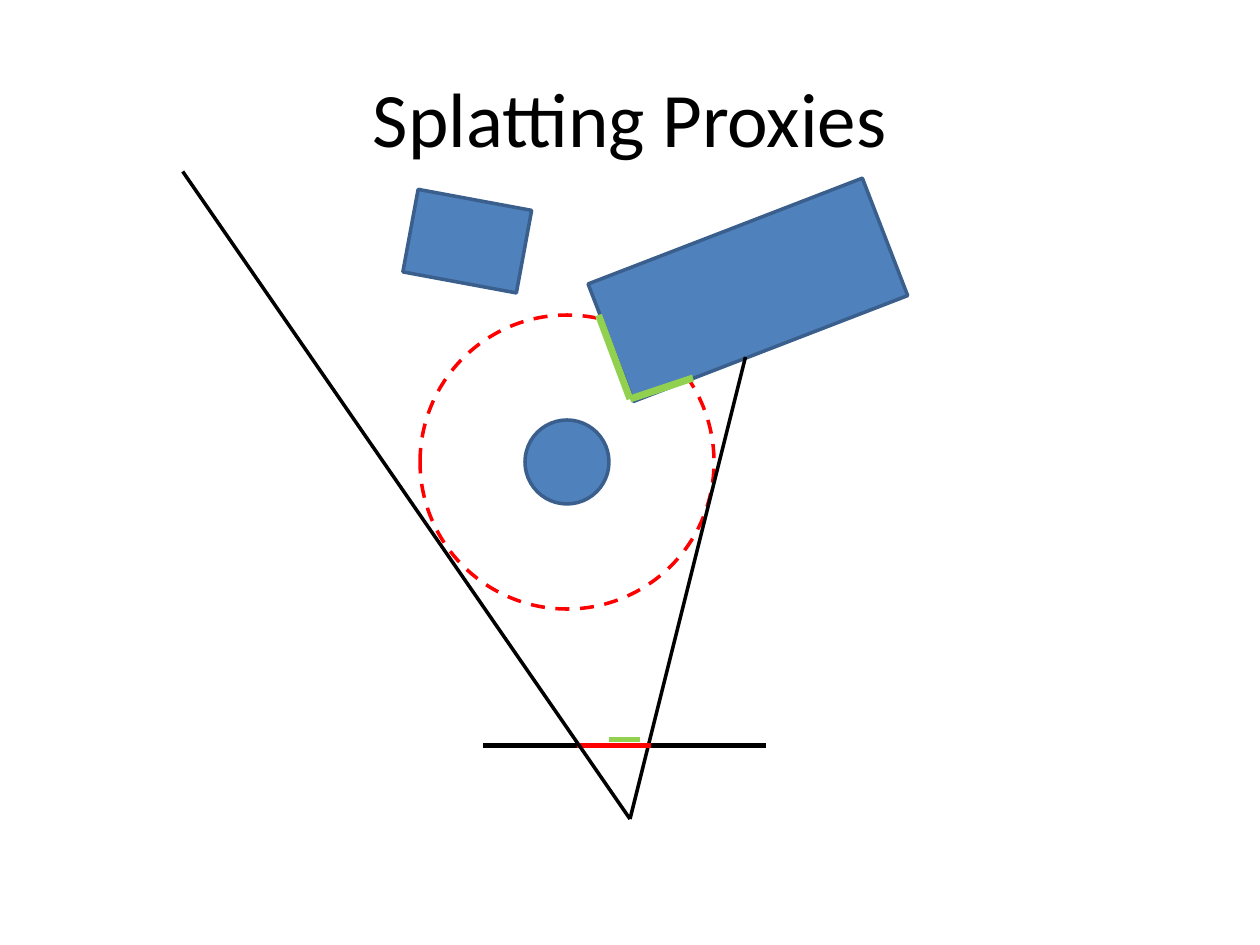
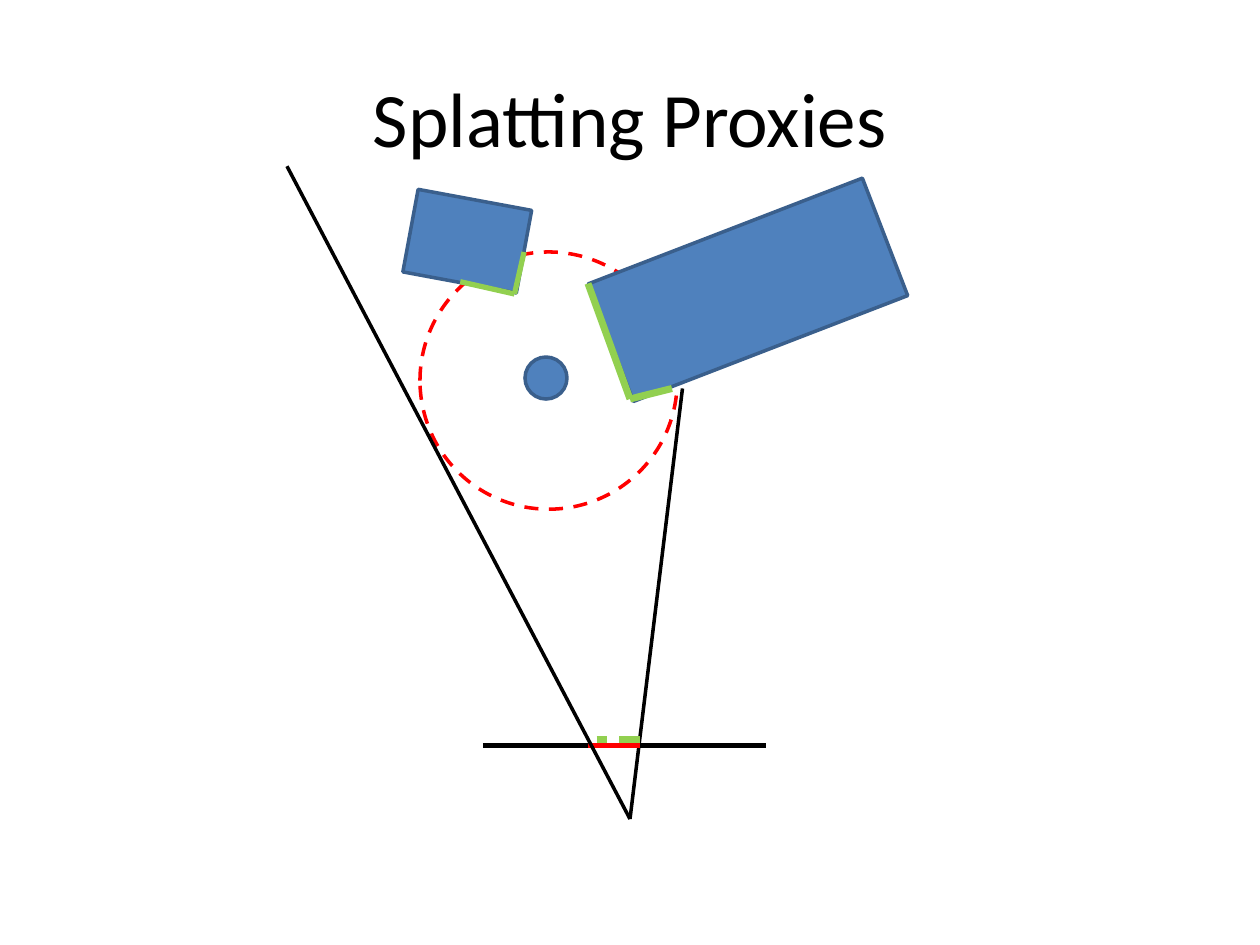
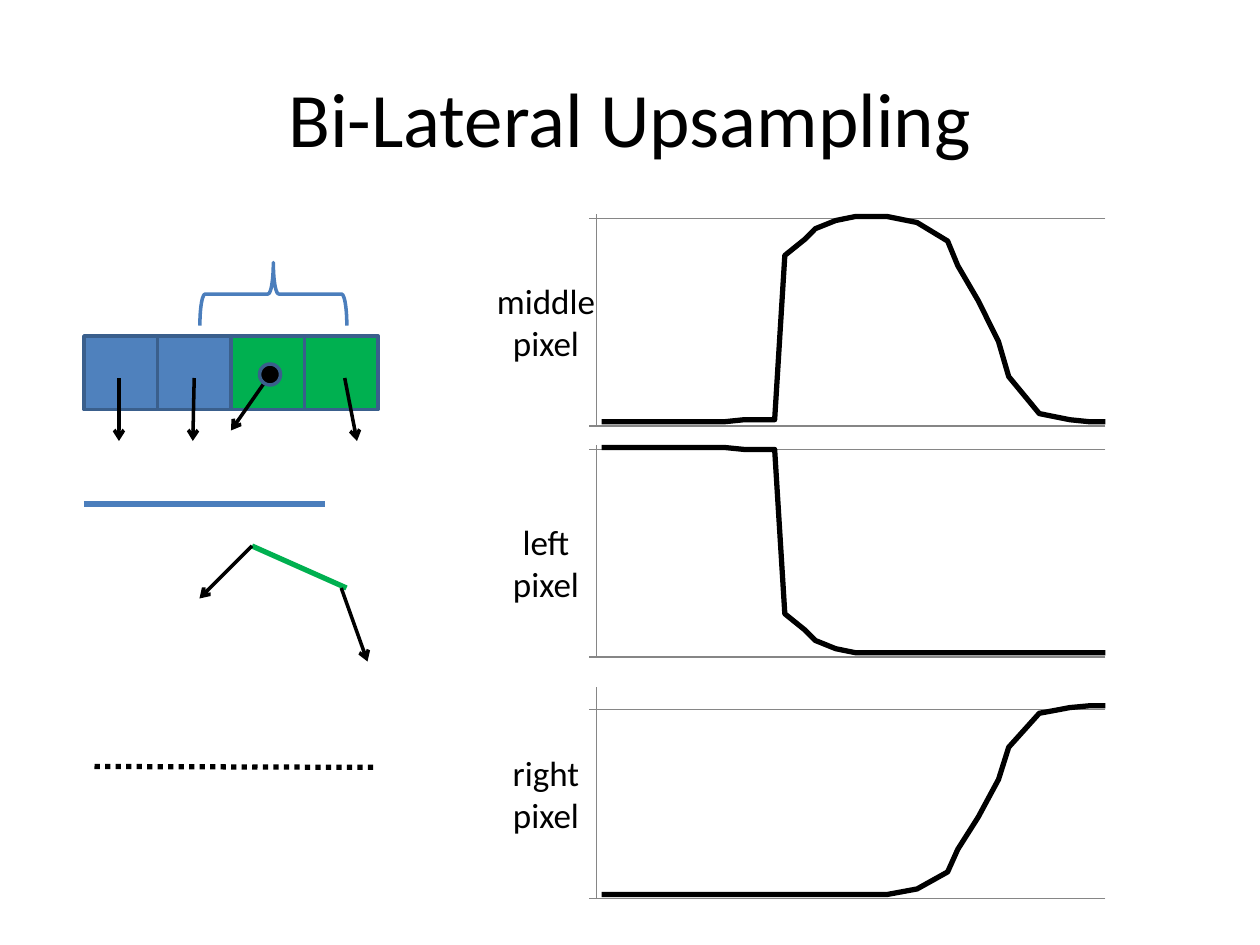
from dataclasses import dataclass
from itertools import pairwise
from math import floor

from lxml.etree import SubElement
from pptx import Presentation
from pptx.chart.data import XyChartData
from pptx.dml.color import RGBColor
from pptx.enum.chart import XL_CHART_TYPE, XL_TICK_LABEL_POSITION, XL_TICK_MARK
from pptx.enum.dml import MSO_LINE
from pptx.enum.shapes import MSO_CONNECTOR, MSO_SHAPE
from pptx.enum.text import MSO_ANCHOR, PP_ALIGN
from pptx.oxml.ns import qn
from pptx.util import Pt


@dataclass(frozen=True)
class Theme:
    font: str = "Calibri"
    title_size: int = 44
    label_size: int = 20
    chart_size: int = 10
    thin: int = 2
    medium: int = 3
    thick: int = 4
    black: RGBColor = RGBColor(0, 0, 0)
    blue: RGBColor = RGBColor(0x4F, 0x81, 0xBD)
    outline: RGBColor = RGBColor(0x3A, 0x5F, 0x8C)
    accent: RGBColor = RGBColor(0x4B, 0x7E, 0xBC)
    red: RGBColor = RGBColor(0xFF, 0, 0)
    lime: RGBColor = RGBColor(0x92, 0xD0, 0x50)
    green: RGBColor = RGBColor(0, 0xB0, 0x50)
    grid: RGBColor = RGBColor(0x86, 0x86, 0x86)


THEME = Theme()
TITLE_BOX = (36, 21.6, 648, 90)
SCENE_BOX = (100, 90)
PIXELS_BOX = (48, 126)


# Shared drawing helpers: every place is an offset from a box
def add_text(slide, box, text, size, anchor=MSO_ANCHOR.TOP):
    frame = slide.shapes.add_textbox(*map(Pt, box)).text_frame
    frame.word_wrap = True
    frame.vertical_anchor = anchor
    paragraph = frame.paragraphs[0]
    paragraph.text = text
    paragraph.alignment = PP_ALIGN.CENTER
    paragraph.font.name = THEME.font
    paragraph.font.size = Pt(size)
    paragraph.font.color.rgb = THEME.black


def add_title(slide, text):
    add_text(slide, TITLE_BOX, text, THEME.title_size, MSO_ANCHOR.MIDDLE)


def add_outlined(slide, box, kind, place, fill=None, line=THEME.outline, rotation=0):
    x, y, width, height = place
    shape = slide.shapes.add_shape(
        kind, Pt(box[0] + x), Pt(box[1] + y), Pt(width), Pt(height))
    shape.shadow.inherit = False
    shape.rotation = rotation
    if fill is None:
        shape.fill.background()
    else:
        shape.fill.solid()
        shape.fill.fore_color.rgb = fill
    shape.line.color.rgb = line
    shape.line.width = Pt(THEME.thin)
    return shape


def add_line(slide, box, start, end, color, width, dash=None, arrow=False):
    ends = [Pt(origin + offset) for point in (start, end)
            for origin, offset in zip(box, point)]
    connector = slide.shapes.add_connector(MSO_CONNECTOR.STRAIGHT, *ends)
    connector.line.color.rgb = color
    connector.line.width = Pt(width)
    if dash:
        connector.line.dash_style = dash
    properties = connector.element.spPr
    if arrow:
        SubElement(properties.find(qn("a:ln")), qn("a:tailEnd"), type="arrow")
    SubElement(properties, qn("a:effectLst"))


# Splatting scene: a ball, its halo, the lit walls and their footprint
@dataclass(frozen=True)
class Splat:
    ball: tuple
    halo: tuple
    rays: tuple
    footprint: tuple
    lit_walls: tuple  # (points, line width)
    lit_spans: tuple  # (from x, to x) on the screen
    span_width: int


SPLATS = (
    Splat(ball=(200, 150, 48, 48), halo=(140, 90, 168, 168),
          rays=((326, 114), (4.4, 8)), footprint=(230, 272),
          lit_walls=((((242, 90), (260, 138), (296, 126)), THEME.thick),),
          lit_spans=((248, 266),), span_width=THEME.medium),
    Splat(ball=(200, 114, 24, 24), halo=(140, 54, 147, 147),
          rays=((290, 132), (64, 5)), footprint=(236, 266),
          lit_walls=((((236, 72), (260, 138), (284, 132)), THEME.thick),
                     (((199.5, 54), (194, 78), (163, 71)), THEME.medium)),
          lit_spans=((254, 266), (241, 247)), span_width=THEME.thick),
)


def draw_scene(slide, box, splat):
    screen_y, span_y, eye = 336, 332.6, (260, 378)
    add_outlined(slide, box, MSO_SHAPE.OVAL, splat.ball, THEME.blue)
    add_line(slide, box, (176, screen_y), (338, screen_y), THEME.black, THEME.medium)
    halo = add_outlined(slide, box, MSO_SHAPE.OVAL, splat.halo, line=THEME.red)
    halo.line.dash_style = MSO_LINE.DASH

    # Neighbouring blocks
    for place, rotation in (((243.4, 39.6, 168, 72), 338.9),
                            ((134, 23.8, 66, 48), 10.5)):
        add_outlined(slide, box, MSO_SHAPE.RECTANGLE, place, THEME.blue,
                     rotation=rotation)

    # View rays, footprint and lit parts
    right_ray, left_ray = splat.rays
    add_line(slide, box, eye, right_ray, THEME.black, THEME.thin)
    first, last = splat.footprint
    add_line(slide, box, (first, screen_y), (last, screen_y), THEME.red, THEME.medium)
    for corners, width in splat.lit_walls:
        for start, end in pairwise(corners):
            add_line(slide, box, start, end, THEME.lime, width)
    for first, last in splat.lit_spans:
        add_line(slide, box, (first, span_y), (last, span_y), THEME.lime,
                 splat.span_width)
    add_line(slide, box, eye, left_ray, THEME.black, THEME.thin)


# Pixel row with normals, above the surfaces they sample
def draw_pixels(slide, box):
    side = 42
    add_line(slide, box, (0, 162), (138, 162), THEME.accent, THEME.medium)
    add_line(slide, box, (96, 186), (150, 210), THEME.green, THEME.medium)
    add_line(slide, box, (6, 312), (168, 312.5), THEME.black, THEME.medium,
             dash=MSO_LINE.ROUND_DOT)
    for column, fill in enumerate([THEME.blue] * 2 + [THEME.green] * 2):
        add_outlined(slide, box, MSO_SHAPE.RECTANGLE,
                     (column * side, 66, side, side), fill)

    normals = (((63, 90), (62.2, 126)), ((105, 90), (84, 120)),
               ((20, 90), (20, 126)), ((149, 90), (156, 126)),
               ((96, 186), (66, 216)), ((147, 210), (162, 252)))
    for start, end in normals:
        add_line(slide, box, start, end, THEME.black, THEME.thin, arrow=True)

    # Sample point and the brace over the blended pixels
    add_outlined(slide, box, MSO_SHAPE.OVAL, (100.3, 82, 12, 12), THEME.black)
    add_outlined(slide, box, MSO_SHAPE.RIGHT_BRACE, (90.2, 0, 36, 84),
                 line=THEME.accent, rotation=270)


# Weight curves, sampled every 1/64
POSITIONS = [floor((0.375 + step / 64) * 100 + 0.5) / 100 for step in range(33)]


@dataclass(frozen=True)
class Curve:
    label: str
    top: int
    label_drop: int
    label_width: int
    highest: int
    major: int
    weights: tuple


CURVES = (
    Curve("left pixel", 252, 42, 72, 101, 101,
          (100,) * 9 + (99,) * 3 + (19, 11, 6, 2) + (0,) * 17),
    Curve("right pixel", 390, 36, 84, 110, 100,
          (0,) * 19 + (1, 3, 6, 12, 24, 41, 61, 78, 90, 96, 98, 99, 100, 100)),
    Curve("middle pixel", 120, 36, 84, 101, 101,
          (0,) * 9 + (1, 1, 1, 81, 89, 94, 98, 100, 100, 100, 99, 97, 94, 88,
                      76, 59, 39, 22, 10, 4, 2, 1, 0, 0)),
)


def fix_plot_area(chart):
    plot_area = chart.element.find(f".//{qn('c:plotArea')}")
    layout = plot_area.find(qn("c:layout"))
    if layout is None:
        layout = SubElement(plot_area, qn("c:layout"))
        plot_area.insert(0, layout)
    manual = SubElement(layout, qn("c:manualLayout"))
    for tag, value in (("layoutTarget", "inner"), ("xMode", "edge"),
                       ("yMode", "edge"), ("x", "0.02"), ("y", "0.02"),
                       ("w", "0.96"), ("h", "0.96")):
        SubElement(manual, qn(f"c:{tag}"), val=value)


def draw_curve(slide, box, curve):
    data = XyChartData()
    series_data = data.add_series("Series 1")
    for position, weight in zip(POSITIONS, curve.weights):
        series_data.add_data_point(position, weight)
    chart = slide.shapes.add_chart(
        XL_CHART_TYPE.XY_SCATTER_LINES_NO_MARKERS, *map(Pt, box), data).chart
    chart.has_legend = False
    chart.has_title = False
    chart.font.name = THEME.font
    chart.font.size = Pt(THEME.chart_size)
    chart.font.color.rgb = THEME.black
    chart.plots[0].vary_by_categories = False

    series = chart.plots[0].series[0]
    series.smooth = False
    series.format.line.color.rgb = THEME.black
    series.format.line.width = Pt(THEME.medium)

    across, weight_axis = chart.category_axis, chart.value_axis
    across.visible = False
    across.has_major_gridlines = False
    across.minimum_scale, across.maximum_scale = 0.375, 0.875
    weight_axis.minimum_scale, weight_axis.maximum_scale = -2, curve.highest
    weight_axis.major_unit = curve.major
    weight_axis.major_tick_mark = XL_TICK_MARK.CROSS
    weight_axis.tick_label_position = XL_TICK_LABEL_POSITION.NONE
    weight_axis.has_major_gridlines = True
    for line in (weight_axis.format.line, weight_axis.major_gridlines.format.line):
        line.color.rgb = THEME.grid
        line.width = Pt(0.75)
    fix_plot_area(chart)


def draw_label(slide, box, curve):
    left, top = box[:2]
    centre = left - 22.8
    add_text(slide, (centre - curve.label_width / 2, top + curve.label_drop,
                     curve.label_width, 55.4), curve.label, THEME.label_size)


# Slide types
def add_splatting_slide(presentation, splat):
    slide = presentation.slides.add_slide(presentation.slide_layouts[6])
    add_title(slide, "Splatting Proxies")
    draw_scene(slide, SCENE_BOX, splat)


def add_upsampling_slide(presentation):
    slide = presentation.slides.add_slide(presentation.slide_layouts[6])
    add_title(slide, "Bi-Lateral Upsampling")
    draw_pixels(slide, PIXELS_BOX)
    for curve in CURVES:
        box = (334.8, curve.top, 303, 126)
        draw_curve(slide, box, curve)
        draw_label(slide, box, curve)


def main():
    presentation = Presentation()
    presentation.slide_width, presentation.slide_height = Pt(720), Pt(540)
    for splat in SPLATS:
        add_splatting_slide(presentation, splat)
    add_upsampling_slide(presentation)
    presentation.save("out.pptx")


if __name__ == "__main__":
    main()
